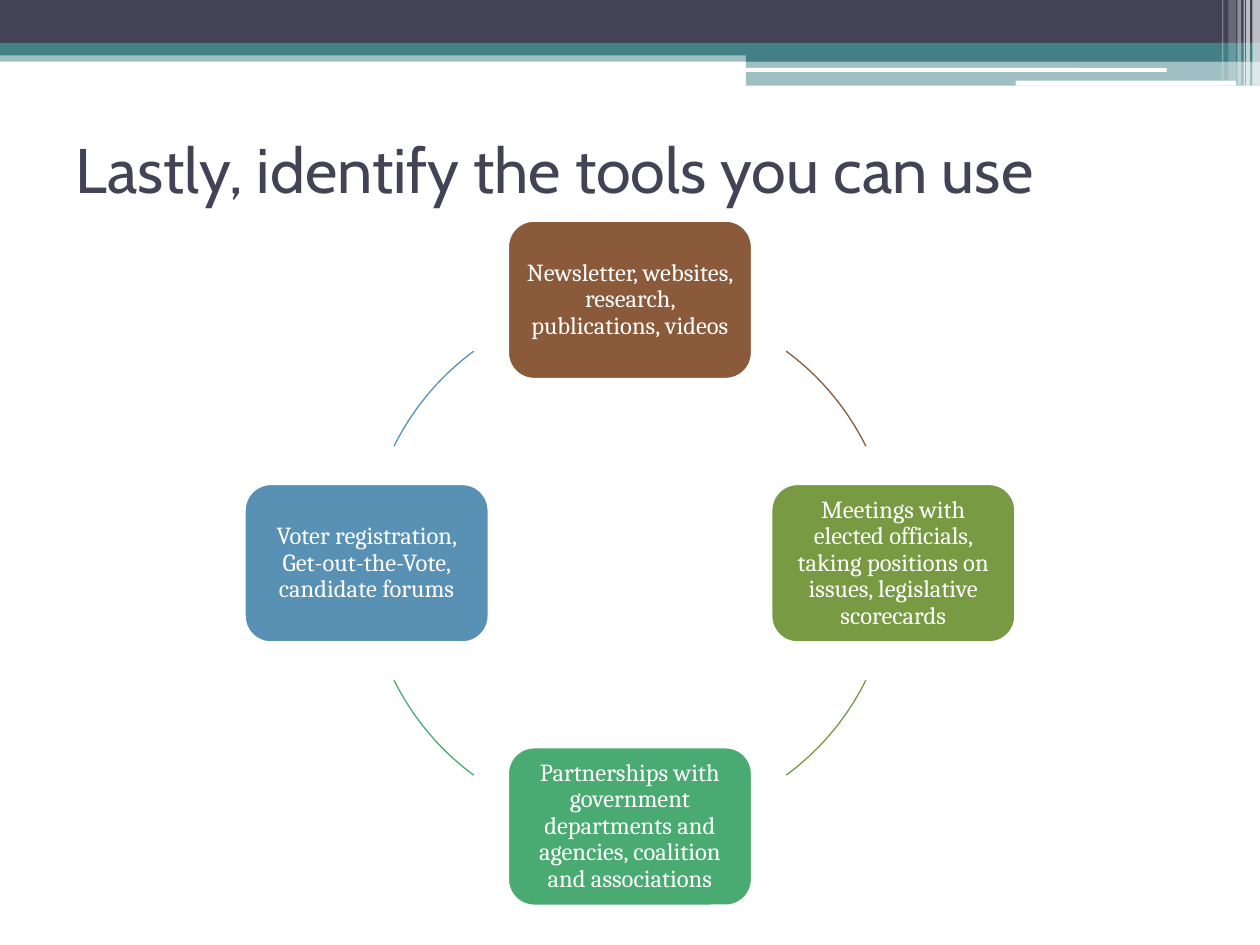
"""Build a slide showing four outreach tools arranged in a cycle."""
from math import cos, radians, sin

from lxml.etree import SubElement
from pptx import Presentation
from pptx.dml.color import RGBColor
from pptx.enum.shapes import MSO_SHAPE
from pptx.enum.text import MSO_ANCHOR, PP_ALIGN
from pptx.oxml.ns import qn
from pptx.util import Inches, Pt

COLUMNS, ROWS = 10, 7.5
CELL = Inches(1)

WHITE = RGBColor(0xFF, 0xFF, 0xFF)
NAVY = RGBColor(0x42, 0x44, 0x56)
TEAL = RGBColor(0x43, 0x80, 0x86)
BROWN = RGBColor(0x8B, 0x5A, 0x3A)
OLIVE = RGBColor(0x77, 0x9A, 0x43)
GREEN = RGBColor(0x4A, 0xAB, 0x72)
BLUE = RGBColor(0x59, 0x91, 0xB5)

presentation = Presentation()
presentation.slide_width = int(COLUMNS * CELL)
presentation.slide_height = int(ROWS * CELL)
slide = presentation.slides.add_slide(presentation.slide_layouts[5])


def add_cell_shape(preset, left, top, width, height):
    shape = slide.shapes.add_shape(
        preset, *(int(cells * CELL) for cells in (left, top, width, height)))
    shape.shadow.inherit = False
    return shape


def add_band(preset, left, top, width, height, color, opacity=100):
    band = add_cell_shape(preset, left, top, width, height)
    band.fill.solid()
    band.fill.fore_color.rgb = color
    band.line.fill.background()
    if opacity < 100:
        tint = band.fill._xPr.find(".//" + qn("a:srgbClr"))
        SubElement(tint, qn("a:alpha"), val=str(opacity * 1000))


STEP_LEFT = 5.92
STEP_WIDTH = COLUMNS - STEP_LEFT
header_bands = [
    (0, 0.4, COLUMNS, 0.09, TEAL, 50),
    (0, 0, COLUMNS, 0.34, NAVY, 100),
    (0, 0.34, COLUMNS, 0.1, TEAL, 100),
    (STEP_LEFT, 0.39, STEP_WIDTH, 0.1, TEAL, 100),
    (STEP_LEFT, 0.48, STEP_WIDTH, 0.2, TEAL, 50),
]
for band in header_bands:
    add_band(MSO_SHAPE.RECTANGLE, *band)

for left, top, width, height in [(5.91, 0.54, 3.35, 0.03), (8.06, 0.64, 1.75, 0.04)]:
    add_band(MSO_SHAPE.ROUNDED_RECTANGLE, left, top, width, height, WHITE)

corner_stripes = [
    (9.94, 0.06, 0.68, 65),
    (9.89, 0.03, 0.68, 65),
    (9.87, 0.01, 0.68, 60),
    (9.82, 0.03, 0.68, 40),
    (9.75, 0.06, 0.64, 20),
    (9.7, 0.01, 0.64, 30),
]
for left, width, height, opacity in corner_stripes:
    add_band(MSO_SHAPE.RECTANGLE, left, 0, width, height, WHITE, opacity)

title = slide.shapes.title
title.left, title.top = int(0.5 * CELL), int(0.75 * CELL)
title.width, title.height = 9 * CELL, int(1.17 * CELL)
title.text_frame.text = "Lastly, identify the tools you can use"
title.text_frame.vertical_anchor = MSO_ANCHOR.MIDDLE
heading = title.text_frame.paragraphs[0]
heading.alignment = PP_ALIGN.LEFT
heading.font.name = "Cabin"
heading.font.size = Pt(36)
heading.font.color.rgb = NAVY

CENTER_X, CENTER_Y, RADIUS = 5, 4.47, 2.09
TOOL_WIDTH, TOOL_HEIGHT = 1.94, 1.26
ARC_STARTS = [306.4, 26.4, 126.4, 206.4]
ARC_SWEEP = 27.2
DEGREE = 0.6

tools = [
    ("Newsletter, websites, research, publications, videos", BROWN),
    ("Meetings with elected officials, taking positions on issues, "
     "legislative scorecards", OLIVE),
    ("Partnerships with government departments and agencies, coalition "
     "and associations", GREEN),
    ("Voter registration, Get-out-the-Vote, candidate forums", BLUE),
]
for index, (wording, color) in enumerate(tools):
    angle = radians(90 * index - 90)
    tool = add_cell_shape(
        MSO_SHAPE.ROUNDED_RECTANGLE,
        CENTER_X + RADIUS * cos(angle) - TOOL_WIDTH / 2,
        CENTER_Y + RADIUS * sin(angle) - TOOL_HEIGHT / 2,
        TOOL_WIDTH, TOOL_HEIGHT)
    tool.fill.solid()
    tool.fill.fore_color.rgb = color
    tool.line.color.rgb = WHITE
    tool.line.width = Pt(1.5)

    frame = tool.text_frame
    frame.word_wrap = True
    frame.vertical_anchor = MSO_ANCHOR.MIDDLE
    frame.margin_left = frame.margin_right = Inches(0.06)
    frame.margin_top = frame.margin_bottom = Inches(0.06)
    frame.text = wording
    label = frame.paragraphs[0]
    label.alignment = PP_ALIGN.CENTER
    label.line_spacing = 0.9
    label.font.name = "Cambria"
    label.font.size = Pt(14)
    label.font.color.rgb = WHITE

    arc = add_cell_shape(MSO_SHAPE.ARC, CENTER_X - RADIUS, CENTER_Y - RADIUS,
                         2 * RADIUS, 2 * RADIUS)
    arc.adjustments[0] = ARC_STARTS[index] * DEGREE
    arc.adjustments[1] = (ARC_STARTS[index] + ARC_SWEEP) * DEGREE
    arc.fill.background()
    arc.line.color.rgb = color
    arc.line.width = Pt(0.75)

presentation.save("out.pptx")
